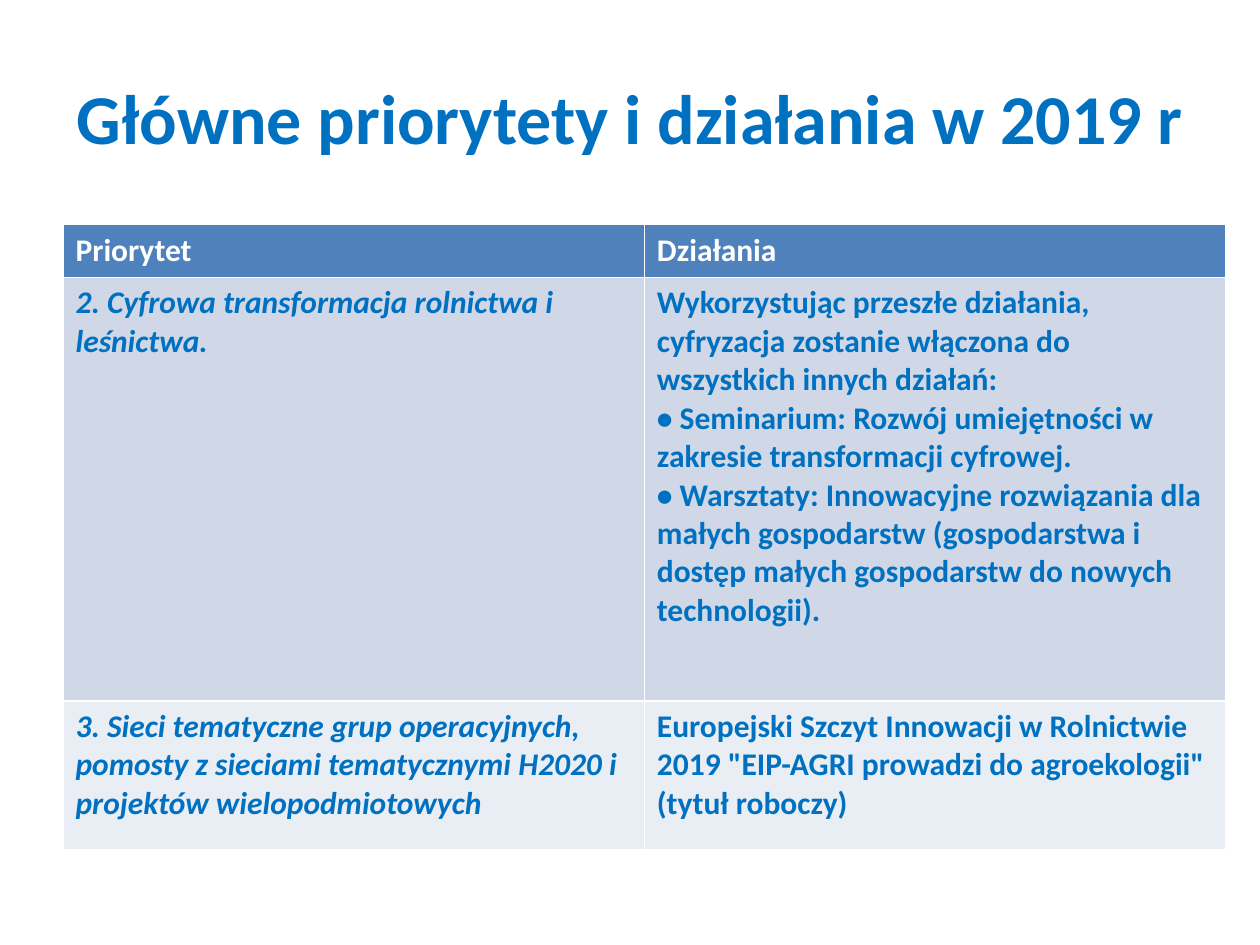
"""Build the slide on the main priorities and activities in 2019."""
from dataclasses import dataclass

from pptx import Presentation
from pptx.dml.color import RGBColor as Rgb
from pptx.enum import text
from pptx.util import Pt


@dataclass(frozen=True)
class Theme:
    font: str = "Calibri"
    blue: str = "0070C0"
    white: str = "FFFFFF"
    head: str = "4F81BD"
    bands: tuple = ("D0D8E8", "E9EDF4")
    title: int = 40
    body: int = 18


theme = Theme()


def add_run(para, words, size, color, slant=False):
    run = para.add_run()
    run.text = words
    font = run.font
    font.name, font.size = theme.font, Pt(size)
    font.bold, font.italic = True, slant
    font.color.rgb = Rgb.from_string(color)


deck = Presentation()
deck.slide_width, deck.slide_height = Pt(720), Pt(540)
slide = deck.slides.add_slide(deck.slide_layouts[5])

title = slide.shapes.title
title.left, title.top, title.width, title.height = Pt(36), Pt(21.6), Pt(648), Pt(90)
title.text_frame.vertical_anchor = text.MSO_ANCHOR.MIDDLE
para = title.text_frame.paragraphs[0]
para.alignment = text.PP_ALIGN.CENTER
add_run(para, "Główne priorytety i działania w 2019 r", theme.title, theme.blue)

rows = [
    (["Priorytet"], ["Działania"]),
    (
        ["2. Cyfrowa transformacja rolnictwa i leśnictwa."],
        [
            "Wykorzystując przeszłe działania, cyfryzacja zostanie włączona do wszystkich innych działań:",
            "• Seminarium: Rozwój umiejętności w zakresie transformacji cyfrowej.",
            "• Warsztaty: Innowacyjne rozwiązania dla małych gospodarstw "
            "(gospodarstwa i dostęp małych gospodarstw do nowych technologii).",
        ],
    ),
    (
        ["3. Sieci tematyczne grup operacyjnych, pomosty z sieciami tematycznymi H2020 "
         "i projektów wielopodmiotowych"],
        ['Europejski Szczyt Innowacji w Rolnictwie 2019 "EIP-AGRI prowadzi do agroekologii" '
         "(tytuł roboczy)"],
    ),
]
heights = [30.2, 242, 85]
fills = [theme.head, *theme.bands]

frame = slide.shapes.add_table(3, 2, Pt(36), Pt(128.4), Pt(664.4), Pt(sum(heights)))
table = frame.table
for row, (cells, height, fill) in enumerate(zip(rows, heights, fills)):
    table.rows[row].height = Pt(height)
    color = theme.blue if row else theme.white
    for col, lines in enumerate(cells):
        cell = table.cell(row, col)
        cell.fill.solid()
        cell.fill.fore_color.rgb = Rgb.from_string(fill)
        body = cell.text_frame
        for index, line in enumerate(lines):
            para = body.add_paragraph() if index else body.paragraphs[0]
            add_run(para, line, theme.body, color, slant=row > 0 and col == 0)

deck.save("out.pptx")
